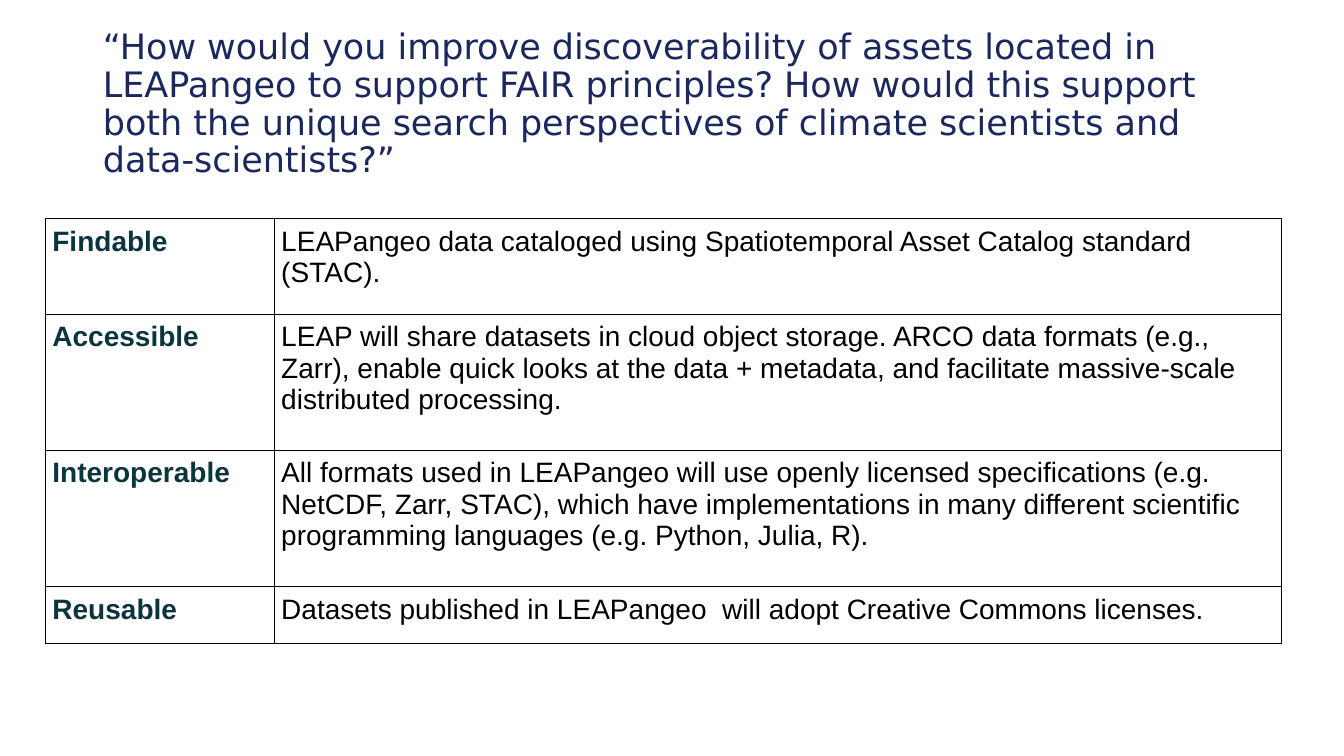
"""Build a slide with a question and a table of FAIR principles."""
from lxml.etree import SubElement
from pptx import Presentation
from pptx.dml.color import RGBColor
from pptx.enum.text import MSO_ANCHOR, MSO_AUTO_SIZE, PP_ALIGN
from pptx.oxml.ns import qn
from pptx.util import Inches, Pt

NAVY = RGBColor(0x1B, 0x28, 0x5E)
TEAL = RGBColor(0x0C, 0x34, 0x3D)
BLACK = RGBColor(0, 0, 0)

QUESTION = (
    "“How would you improve discoverability of assets located in LEAPangeo "
    "to support FAIR principles? How would this support both the unique search "
    "perspectives of climate scientists and data-scientists?”"
)
PRINCIPLES = [
    ("Findable", 0.95,
     "LEAPangeo data cataloged using Spatiotemporal Asset Catalog standard (STAC)."),
    ("Accessible", 1.35,
     "LEAP will share datasets in cloud object storage. ARCO data formats (e.g., Zarr), "
     "enable quick looks at the data + metadata, and facilitate massive-scale "
     "distributed processing."),
    ("Interoperable", 1.35,
     "All formats used in LEAPangeo will use openly licensed specifications (e.g. NetCDF, "
     "Zarr, STAC), which have implementations in many different scientific programming "
     "languages (e.g. Python, Julia, R)."),
    ("Reusable", 0.56,
     "Datasets published in LEAPangeo  will adopt Creative Commons licenses."),
]
COLUMN_WIDTHS = [2.27, 9.99]
COLUMN_FORMATS = [
    {"name": "Arial", "size": Pt(20), "bold": True},
    {"name": "Arial", "size": Pt(20), "bold": False},
]
COLUMN_COLORS = [TEAL, BLACK]


def set_values(target, values):
    for name, value in values.items():
        setattr(target, name, value)


def add_borders(cell):
    properties = cell._tc.get_or_add_tcPr()
    for index, side in enumerate(("a:lnL", "a:lnR", "a:lnT", "a:lnB")):
        line = SubElement(properties, qn(side), w=str(Pt(1)))
        fill = SubElement(line, qn("a:solidFill"))
        SubElement(fill, qn("a:srgbClr"), val=str(BLACK))
        properties.remove(line)
        properties.insert(index, line)


deck = Presentation()
set_values(deck, {"slide_width": Inches(13.33), "slide_height": Inches(7.5)})
page = deck.slides.add_slide(deck.slide_layouts[5])

title = page.shapes.title
set_values(title, {"left": Inches(0.92), "top": Inches(0.23),
                   "width": Inches(11.5), "height": Inches(1.62)})
set_values(title.text_frame, {
    "text": QUESTION, "word_wrap": True, "auto_size": MSO_AUTO_SIZE.NONE,
    "vertical_anchor": MSO_ANCHOR.MIDDLE,
    "margin_left": Inches(0.1), "margin_right": Inches(0.1),
    "margin_top": Inches(0.05), "margin_bottom": Inches(0.05),
})
para = title.text_frame.paragraphs[0]
set_values(para, {"alignment": PP_ALIGN.LEFT, "line_spacing": 0.9})
span = para.runs[0]
set_values(span.font, {"name": "DejaVu Sans", "size": Pt(25)})
span.font.color.rgb = NAVY

table = page.shapes.add_table(
    len(PRINCIPLES), len(COLUMN_WIDTHS), Inches(0.45), Inches(2.17),
    Inches(sum(COLUMN_WIDTHS)), Inches(sum(height for _, height, _ in PRINCIPLES)),
).table
set_values(table, {"first_row": False, "horz_banding": False})
for column, width in zip(table.columns, COLUMN_WIDTHS):
    column.width = Inches(width)

for row, (principle, height, explanation) in zip(table.rows, PRINCIPLES):
    row.height = Inches(height)
    for cell, text, values, color in zip(
            row.cells, (principle, explanation), COLUMN_FORMATS, COLUMN_COLORS):
        set_values(cell, {"text": text, "vertical_anchor": MSO_ANCHOR.TOP})
        for side in ("left", "right", "top", "bottom"):
            setattr(cell, f"margin_{side}", Inches(0.07))
        cell.fill.background()
        add_borders(cell)
        span = cell.text_frame.paragraphs[0].runs[0]
        set_values(span.font, values)
        span.font.color.rgb = color

deck.save("out.pptx")
